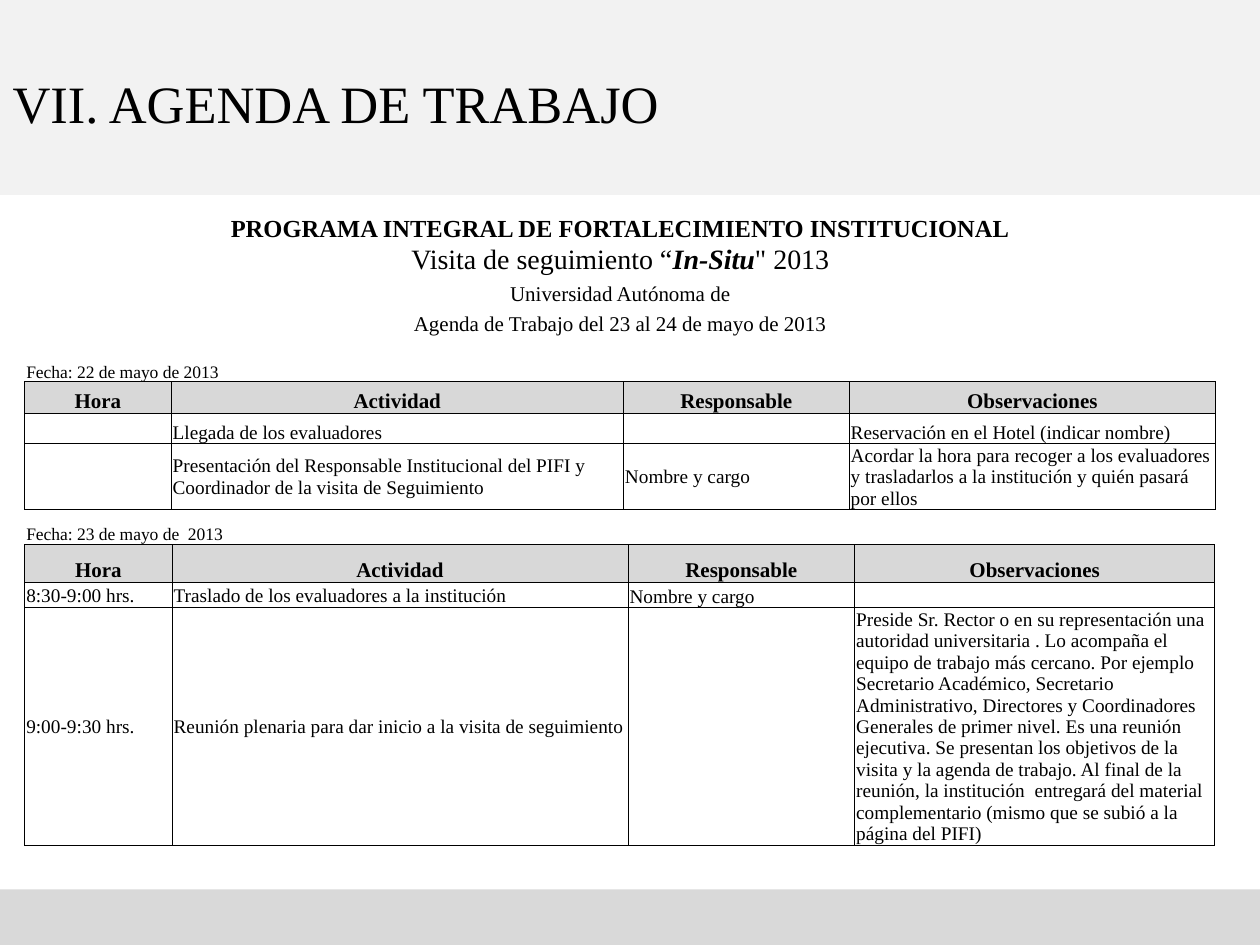
import dataclasses

import lxml.etree
import pptx
import pptx.dml.color
import pptx.enum.shapes
import pptx.enum.text
import pptx.oxml.ns
import pptx.util

Cm = pptx.util.Cm
Anchor = pptx.enum.text.MSO_ANCHOR
Align = pptx.enum.text.PP_ALIGN
qn = pptx.oxml.ns.qn


@dataclasses.dataclass(frozen=True)
class Theme:
    """Colours, type sizes and the font of the slide."""

    font: str = "Times New Roman"
    ink: str = "000000"
    title_band: str = "F2F2F2"
    footer_band: str = "D9D9D9"
    header_fill: str = "D8D8D8"
    title_size: int = 30
    program_size: int = 14
    visit_size: int = 16
    heading_size: int = 12
    body_size: int = 11
    date_size: int = 10
    border_width: float = 0.5
    cell_inset: float = 0.03


@dataclasses.dataclass(frozen=True)
class Entry:
    """One table cell; asterisks in the text enclose bold italic words."""

    text: str = ""
    size: int = 11
    bold: bool = False
    align: Align = Align.LEFT
    anchor: Anchor = Anchor.BOTTOM
    columns: int = 1
    fill: str = ""
    borders: str = "LRTB"


class AgendaSlide:
    """Draws agenda elements on one slide in a single theme."""

    def __init__(self, presentation, theme):
        self.theme = theme
        self.slide = presentation.slides.add_slide(presentation.slide_layouts[5])

    def color(self, value):
        """Return a colour object for a hex value."""
        return pptx.dml.color.RGBColor.from_string(value)

    def style(self, run, size, bold=False, italic=False):
        """Format one run."""
        run.font.name = self.theme.font
        run.font.size = pptx.util.Pt(size)
        run.font.bold = bold
        run.font.italic = italic
        run.font.color.rgb = self.color(self.theme.ink)

    def band(self, top, height, fill):
        """Add a full-width band."""
        shape = self.slide.shapes.add_shape(
            pptx.enum.shapes.MSO_SHAPE.RECTANGLE, 0, Cm(top), Cm(25.4), Cm(height))
        shape.shadow.inherit = False
        shape.fill.solid()
        shape.fill.fore_color.rgb = self.color(fill)
        shape.line.fill.background()

    def title(self, text, top, height):
        """Place the title in front of the bands."""
        title = self.slide.shapes.title
        title.element.getparent().append(title.element)
        title.left, title.top, title.width, title.height = 0, Cm(top), Cm(25.4), Cm(height)
        title.text_frame.text = text
        title.text_frame.vertical_anchor = Anchor.MIDDLE
        paragraph = title.text_frame.paragraphs[0]
        paragraph.alignment = Align.LEFT
        self.style(paragraph.runs[0], self.theme.title_size)

    def border(self, cell, sides):
        """Draw the named sides of a cell and clear the others."""
        properties = cell._tc.get_or_add_tcPr()
        for side in "LRTB":
            width = pptx.util.Pt(self.theme.border_width)
            line = lxml.etree.SubElement(properties, qn(f"a:ln{side}"), w=str(width))
            if side in sides:
                fill = lxml.etree.SubElement(line, qn("a:solidFill"))
                lxml.etree.SubElement(fill, qn("a:srgbClr"), val=self.theme.ink)
            else:
                lxml.etree.SubElement(line, qn("a:noFill"))

    def cell(self, cell, entry):
        """Write and format one table cell."""
        cell.margin_left = cell.margin_right = cell.margin_top = Cm(self.theme.cell_inset)
        cell.margin_bottom = 0
        cell.vertical_anchor = entry.anchor
        self.border(cell, entry.borders)
        if entry.fill:
            cell.fill.solid()
            cell.fill.fore_color.rgb = self.color(entry.fill)
        else:
            cell.fill.background()
        paragraph = cell.text_frame.paragraphs[0]
        paragraph.alignment = entry.align
        if not entry.text:
            lxml.etree.SubElement(paragraph._p, qn("a:endParaRPr"), sz=str(entry.size * 100))
        for index, part in enumerate(entry.text.split("*") if entry.text else []):
            run = paragraph.add_run()
            run.text = part
            emphasis = index % 2 == 1
            self.style(run, entry.size, entry.bold or emphasis, emphasis)

    def table(self, top, widths, heights, rows):
        """Add a table from rows of entries."""
        table = self.slide.shapes.add_table(
            len(rows), len(widths), Cm(0.5), Cm(top), Cm(sum(widths)), Cm(sum(heights))).table
        table.first_row = table.horz_banding = False
        for column, width in zip(table.columns, widths):
            column.width = Cm(width)
        for row, height in zip(table.rows, heights):
            row.height = Cm(height)
        for row_index, entries in enumerate(rows):
            column_index = 0
            for entry in entries:
                cell = table.cell(row_index, column_index)
                last = column_index + entry.columns - 1
                if entry.columns > 1:
                    cell.merge(table.cell(row_index, last))
                for index in range(column_index, last + 1):
                    content = entry if index == column_index else dataclasses.replace(entry, text="")
                    self.cell(table.cell(row_index, index), content)
                column_index = last + 1


def banner_row(text, size, bold=False):
    """Return a centred row across the table."""
    return [Entry(text, size, bold, Align.CENTER, columns=4, borders="")]


def date_row(text, theme):
    """Return the row that dates a day."""
    blank = Entry(size=theme.date_size, borders="B")
    return [Entry(text, theme.date_size, columns=2, borders="B"), blank, blank]


def header_row(theme):
    """Return the row of column headings."""
    return [Entry(text, theme.heading_size, True, Align.CENTER, fill=theme.header_fill)
            for text in ("Hora", "Actividad", "Responsable", "Observaciones")]


def body_row(theme, anchors, *texts):
    """Return an agenda row; anchors has one letter, M or B, per cell."""
    places = {"M": Anchor.MIDDLE, "B": Anchor.BOTTOM}
    return [Entry(text, theme.body_size, anchor=places[letter])
            for letter, text in zip(anchors, texts)]


def main():
    """Build the agenda slide."""
    theme = Theme()
    presentation = pptx.Presentation()
    presentation.slide_width, presentation.slide_height = Cm(25.4), Cm(19.05)
    agenda = AgendaSlide(presentation, theme)
    agenda.band(0, 3.93, theme.title_band)
    agenda.band(17.93, 1.12, theme.footer_band)
    agenda.title("VII. AGENDA DE TRABAJO", 0.17, 3.78)
    agenda.table(4.11, [2.95, 9.12, 4.55, 7.39],
                 [0.79, 0.63, 0.61, 0.61, 0.42, 0.42, 0.63, 0.61, 1.33], [
        banner_row("PROGRAMA INTEGRAL DE FORTALECIMIENTO INSTITUCIONAL", theme.program_size, True),
        banner_row("Visita de seguimiento “*In-Situ*\" 2013", theme.visit_size),
        banner_row("Universidad Autónoma de", theme.heading_size),
        banner_row("Agenda de Trabajo del 23 al 24 de mayo de 2013", theme.heading_size),
        [Entry(size=theme.date_size, borders="")] * 4,
        date_row("Fecha: 22 de mayo de 2013", theme),
        header_row(theme),
        body_row(theme, "BBBB", "", "Llegada de los evaluadores", "",
                 "Reservación en el Hotel (indicar nombre)"),
        body_row(theme, "BMMB", "",
                 "Presentación del Responsable Institucional del PIFI y "
                 "Coordinador de la visita de Seguimiento", "Nombre y cargo",
                 "Acordar la hora para recoger a los evaluadores y trasladarlos "
                 "a la institución y quién pasará por ellos"),
    ])
    agenda.table(10.52, [2.97, 9.19, 4.57, 7.26], [0.41, 0.76, 0.44, 4.77], [
        date_row("Fecha: 23 de mayo de  2013", theme),
        header_row(theme),
        body_row(theme, "MMBB", "8:30-9:00 hrs.",
                 "Traslado de los evaluadores a la institución", "Nombre y cargo", ""),
        body_row(theme, "MMBM", "9:00-9:30 hrs.",
                 "Reunión plenaria para dar inicio a la visita de seguimiento", "",
                 "Preside Sr. Rector o en su representación una autoridad universitaria . "
                 "Lo acompaña el equipo de trabajo más cercano. Por ejemplo Secretario "
                 "Académico, Secretario Administrativo, Directores y Coordinadores Generales "
                 "de primer nivel. Es una reunión ejecutiva. Se presentan los objetivos de la "
                 "visita y la agenda de trabajo. Al final de la reunión, la institución  "
                 "entregará del material complementario (mismo que se subió a la página del PIFI)"),
    ])
    presentation.save("out.pptx")


if __name__ == "__main__":
    main()
